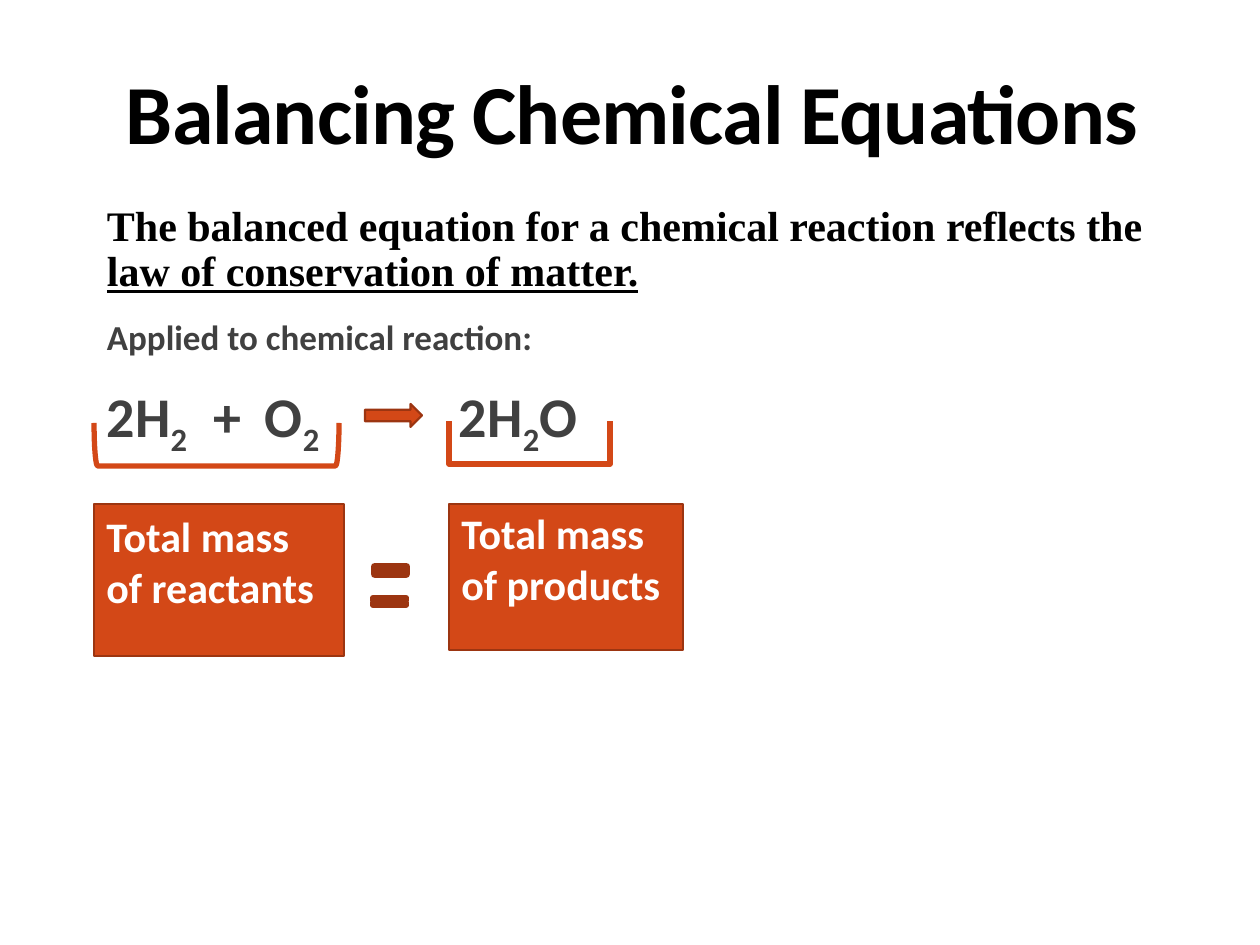
from lxml import etree
from pptx import Presentation
from pptx import util as u
from pptx.dml.color import RGBColor
from pptx.enum import shapes, text
from pptx.oxml.ns import qn

SCALE = 914400 // 126
ORANGE, RUST, GRAY = "D34817", "9C3511", "404040"
SHAPE = shapes.MSO_SHAPE


def px(n):
    return u.Emu(n * SCALE)


def color(value):
    return RGBColor.from_string(value)


def set_font(font, size, fill, name="Calibri"):
    font.name, font.size, font.bold = name, u.Pt(size), True
    font.color.rgb = color(fill)


def add_text_box(slide, x, y, w, h, anchor):
    tf = slide.shapes.add_textbox(px(x), px(y), px(w), px(h)).text_frame
    tf.word_wrap = True
    tf.vertical_anchor = anchor
    tf.margin_left, tf.margin_right = px(13), 0
    return tf


def add_shape(slide, kind, x, y, w, h, fill, line, weight):
    s = slide.shapes.add_shape(kind, px(x), px(y), px(w), px(h))
    s.shadow.inherit = False
    if fill:
        s.fill.solid()
        s.fill.fore_color.rgb = color(fill)
    else:
        s.fill.background()
    s.line.color.rgb = color(line)
    s.line.width = u.Pt(weight)
    return s


def add_mass_box(slide, x, y, w, h, label):
    s = add_shape(slide, SHAPE.RECTANGLE, x, y, w, h, ORANGE, RUST, 1.25)
    tf = s.text_frame
    tf.word_wrap = True
    tf.vertical_anchor = text.MSO_ANCHOR.MIDDLE
    tf.margin_bottom = px(44)
    p = tf.paragraphs[0]
    p.text = label
    p.alignment = text.PP_ALIGN.LEFT
    set_font(p.font, 24, "FFFFFF")


def add_bracket(slide, x, y, w, h, curve):
    s = add_shape(slide, SHAPE.RIGHT_BRACKET, x + (w - h) // 2, y - (w - h) // 2,
                  h, w, None, ORANGE, 3)
    s.rotation = 90
    s.adjustments[0] = curve


def add_tabs(p, stops):
    tabs = etree.SubElement(p._p.get_or_add_pPr(), qn("a:tabLst"))
    for stop in stops:
        etree.SubElement(tabs, qn("a:tab"), pos=str(px(stop)), algn="l")


def add_title(slide):
    tf = add_text_box(slide, 113, 39, 1050, 129, text.MSO_ANCHOR.BOTTOM)
    p = tf.paragraphs[0]
    p.line_spacing = 0.85
    r = p.add_run()
    r.text = "Balancing Chemical Equations"
    r._r.get_or_add_rPr().set("spc", "-50")
    set_font(p.font, 48, "000000")


def add_body(slide):
    tf = add_text_box(slide, 94, 199, 1059, 610, text.MSO_ANCHOR.TOP)
    law = tf.paragraphs[0]
    law.add_run().text = "The balanced equation for a chemical reaction reflects the "
    r = law.add_run()
    r.text = "law of conservation of matter."
    r.font.underline = True
    set_font(law.font, 24, "000000", "Times New Roman")

    applied = tf.add_paragraph()
    applied.text = "Applied to chemical reaction:"
    set_font(applied.font, 20, GRAY)

    equation = tf.add_paragraph()
    add_tabs(equation, (107, 158, 352))
    for part, subscript in (("2H", ""), ("\t+\tO", "2"), ("\t2H", "2"), ("O", "2")):
        if subscript:
            r = equation.add_run()
            r.text = subscript
            r._r.get_or_add_rPr().set("baseline", "-25000")
        equation.add_run().text = part
    set_font(equation.font, 32, GRAY)

    for p in tf.paragraphs:
        p.line_spacing = 0.9
        p.space_after = u.Pt(2)
    for p in (applied, equation):
        p.space_before = u.Pt(12)


def main():
    prs = Presentation()
    prs.slide_width, prs.slide_height = px(1260), px(945)
    slide = prs.slides.add_slide(prs.slide_layouts[6])
    add_title(slide)
    add_body(slide)
    add_shape(slide, SHAPE.RIGHT_ARROW, 365, 404, 57, 23, ORANGE, RUST, 1.25)
    add_bracket(slide, 94, 423, 245, 43, 0.08333)
    add_bracket(slide, 449, 421, 161, 43, 0)
    add_mass_box(slide, 94, 504, 250, 152, "Total mass of reactants")
    add_mass_box(slide, 449, 504, 234, 146, "Total mass of products")
    add_shape(slide, SHAPE.MATH_EQUAL, 369, 564, 43, 13, ORANGE, RUST, 4.5)
    add_shape(slide, SHAPE.MATH_EQUAL, 367, 595, 45, 13, ORANGE, RUST, 3)
    prs.save("out.pptx")


if __name__ == "__main__":
    main()
